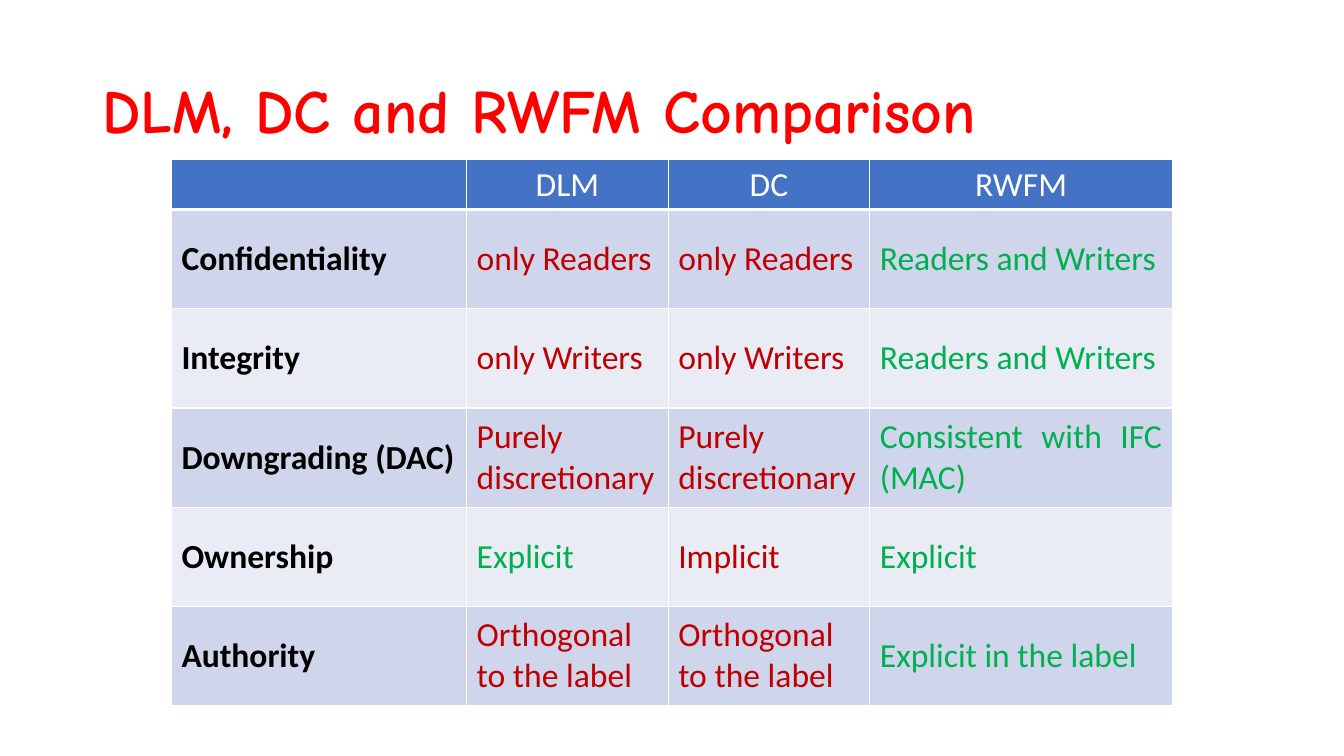
"""Build a slide that compares the DLM, DC and RWFM label models."""
from dataclasses import dataclass

from lxml.etree import SubElement
from pptx import Presentation
from pptx.dml.color import RGBColor
from pptx.enum.text import MSO_ANCHOR, PP_ALIGN
from pptx.oxml.ns import qn
from pptx.slide import Slide
from pptx.table import _Cell
from pptx.text.text import TextFrame
from pptx.util import Cm, Pt

WHITE = "FFFFFF"
BLACK = "000000"
RED = "FF0000"
WEAK = "C00000"
STRONG = "00B050"
HEADER_FILL = "4472C4"
BAND_FILLS = ("CFD5EA", "E9EBF5")

HEADERS = ("", "DLM", "DC", "RWFM")
COLUMN_WIDTHS = (7.44, 5.08, 5.08, 7.62)
HEADER_HEIGHT = 1.27
ROW_HEIGHT = 2.5


@dataclass(frozen=True)
class TextStyle:
    size: int
    font: str
    color: str
    bold: bool = False
    align: PP_ALIGN = PP_ALIGN.JUSTIFY


@dataclass(frozen=True)
class Criterion:
    name: str
    dlm: str
    dc: str
    rwfm: str
    dlm_color: str = WEAK


CRITERIA = (
    Criterion("Confidentiality", "only Readers", "only Readers", "Readers and Writers"),
    Criterion("Integrity", "only Writers", "only Writers", "Readers and Writers"),
    Criterion("Downgrading (DAC)", "Purely discretionary", "Purely discretionary",
              "Consistent with IFC (MAC)"),
    Criterion("Ownership", "Explicit", "Implicit", "Explicit", STRONG),
    Criterion("Authority", "Orthogonal to the label", "Orthogonal to the label",
              "Explicit in the label"),
)

TITLE_STYLE = TextStyle(44, "Comic Neue", RED, True, PP_ALIGN.LEFT)
HEADER_STYLE = TextStyle(24, "Calibri", WHITE, align=PP_ALIGN.CENTER)
NAME_STYLE = TextStyle(24, "Calibri", BLACK, True)


def rgb(value: str) -> RGBColor:
    return RGBColor.from_string(value)


def write_text(text_frame: TextFrame, text: str, style: TextStyle) -> None:
    text_frame.text = text
    paragraph = text_frame.paragraphs[0]
    paragraph.alignment = style.align
    for run in paragraph.runs:
        run.font.size = Pt(style.size)
        run.font.name = style.font
        run.font.bold = style.bold
        run.font.color.rgb = rgb(style.color)


def add_borders(cell: _Cell, bottom_width: int) -> None:
    properties = cell._tc.get_or_add_tcPr()
    for side, width in (("L", 1), ("R", 1), ("T", 1), ("B", bottom_width)):
        line = SubElement(properties, qn(f"a:ln{side}"), w=str(Pt(width)))
        SubElement(SubElement(line, qn("a:solidFill")), qn("a:srgbClr"), val=WHITE)


def fill_cell(cell: _Cell, text: str, style: TextStyle, fill: str, bottom_width: int = 1) -> None:
    add_borders(cell, bottom_width)
    cell.fill.solid()
    cell.fill.fore_color.rgb = rgb(fill)
    write_text(cell.text_frame, text, style)


def add_title(slide: Slide, text: str) -> None:
    text_frame = slide.shapes.add_textbox(Cm(2.33), Cm(1.01), Cm(29.21), Cm(3.68)).text_frame
    text_frame.word_wrap = True
    text_frame.vertical_anchor = MSO_ANCHOR.MIDDLE
    write_text(text_frame, text, TITLE_STYLE)
    text_frame.paragraphs[0].line_spacing = 0.9


def add_comparison(slide: Slide) -> None:
    height = HEADER_HEIGHT + ROW_HEIGHT * len(CRITERIA)
    table = slide.shapes.add_table(
        len(CRITERIA) + 1, len(HEADERS),
        Cm(4.32), Cm(4.01), Cm(sum(COLUMN_WIDTHS)), Cm(height),
    ).table
    for column, width in zip(table.columns, COLUMN_WIDTHS):
        column.width = Cm(width)
    table.rows[0].height = Cm(HEADER_HEIGHT)
    for index, header in enumerate(HEADERS):
        fill_cell(table.cell(0, index), header, HEADER_STYLE, HEADER_FILL, bottom_width=3)

    for row, criterion in enumerate(CRITERIA, start=1):
        table.rows[row].height = Cm(ROW_HEIGHT)
        entries = (
            (criterion.name, NAME_STYLE),
            (criterion.dlm, TextStyle(24, "Calibri", criterion.dlm_color)),
            (criterion.dc, TextStyle(24, "Calibri", WEAK)),
            (criterion.rwfm, TextStyle(24, "Calibri", STRONG)),
        )
        for index, (text, style) in enumerate(entries):
            cell = table.cell(row, index)
            fill_cell(cell, text, style, BAND_FILLS[(row - 1) % 2])
            cell.vertical_anchor = MSO_ANCHOR.MIDDLE


def main() -> None:
    presentation = Presentation()
    presentation.slide_width = Cm(33.87)
    presentation.slide_height = Cm(19.05)
    slide = presentation.slides.add_slide(presentation.slide_layouts[6])
    add_title(slide, "DLM, DC and RWFM Comparison")
    add_comparison(slide)
    presentation.save("out.pptx")


if __name__ == "__main__":
    main()
